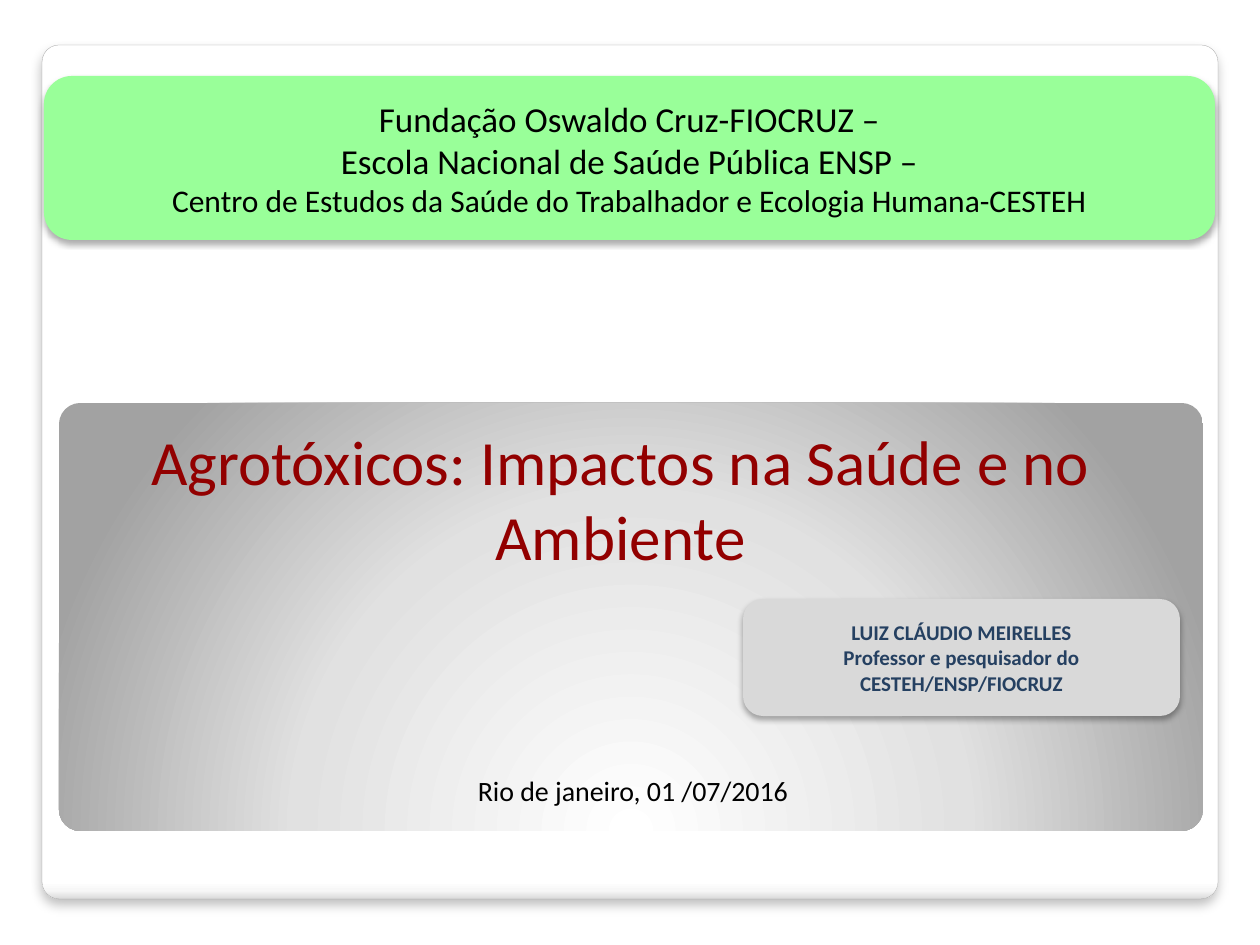
from dataclasses import dataclass
from typing import Optional

from lxml.etree import SubElement
from pptx import Presentation
from pptx.dml.color import RGBColor
from pptx.enum.shapes import MSO_SHAPE
from pptx.enum.text import MSO_ANCHOR, PP_ALIGN
from pptx.oxml.ns import qn
from pptx.util import Emu, Pt

PX = 914400 / 126


def px(n: int) -> Emu:
    return Emu(round(n * PX))


def rgb(value: str) -> RGBColor:
    return RGBColor.from_string(value)


@dataclass
class Shadow:
    alpha: int
    blur: float
    dist: float


@dataclass
class Gradient:
    """Stops in percent; linear downwards unless a focus rectangle is given."""
    stops: list[tuple[int, str]]
    focus: Optional[dict[str, int]] = None


@dataclass
class Line:
    text: str
    size: int
    color: str
    bold: bool = False


@dataclass
class Block:
    box: tuple[int, int, int, int]
    fill: Optional[str | Gradient] = None
    radius: float = 0.17
    outline: Optional[str] = None
    shadow: Optional[Shadow] = None
    lines: tuple[Line, ...] = ()


def add_gradient(sp, gradient: Gradient) -> None:
    grad = sp._element.spPr.makeelement(qn("a:gradFill"), {"rotWithShape": "1"})
    sp._element.spPr.find(qn("a:prstGeom")).addnext(grad)
    stops = SubElement(grad, qn("a:gsLst"))
    for pos, color in gradient.stops:
        gs = SubElement(stops, qn("a:gs"), pos=str(pos * 1000))
        SubElement(gs, qn("a:srgbClr"), val=color)
    if gradient.focus:
        circle = SubElement(grad, qn("a:path"), {"path": "circle"})
        SubElement(circle, qn("a:fillToRect"),
                   {side: str(v * 1000) for side, v in gradient.focus.items()})
    else:
        SubElement(grad, qn("a:lin"), ang="5400000", scaled="0")


def add_shadow(sp, shadow: Shadow) -> None:
    effects = sp._element.spPr.find(qn("a:effectLst"))
    outer = SubElement(effects, qn("a:outerShdw"), blurRad=str(Pt(shadow.blur)),
                       dist=str(Pt(shadow.dist)), dir="5400000", rotWithShape="0")
    color = SubElement(outer, qn("a:srgbClr"), val="000000")
    SubElement(color, qn("a:alpha"), val=str(shadow.alpha * 1000))


def add_lines(tf, lines: tuple[Line, ...]) -> None:
    tf.word_wrap = True
    for i, line in enumerate(lines):
        p = tf.add_paragraph() if i else tf.paragraphs[0]
        p.alignment = PP_ALIGN.CENTER
        r = p.add_run()
        r.text = line.text
        font = {"name": "Calibri", "size": Pt(line.size), "bold": line.bold}
        for name, value in font.items():
            setattr(r.font, name, value)
        r.font.color.rgb = rgb(line.color)


def add_block(s, block: Block) -> None:
    """Draw a rounded rectangle, or a plain text box when there is no fill."""
    box = [px(n) for n in block.box]
    if block.fill is None:
        add_lines(s.shapes.add_textbox(*box).text_frame, block.lines)
        return
    sp = s.shapes.add_shape(MSO_SHAPE.ROUNDED_RECTANGLE, *box)
    sp.adjustments[0] = block.radius
    sp.shadow.inherit = False
    if isinstance(block.fill, Gradient):
        add_gradient(sp, block.fill)
    else:
        sp.fill.solid()
        sp.fill.fore_color.rgb = rgb(block.fill)
    if block.outline:
        sp.line.color.rgb = rgb(block.outline)
        sp.line.width = Pt(0.16)
    else:
        sp.line.fill.background()
    if block.shadow:
        add_shadow(sp, block.shadow)
    if block.lines:
        sp.text_frame.vertical_anchor = MSO_ANCHOR.MIDDLE
        add_lines(sp.text_frame, block.lines)


FRAME_FILL = Gradient([(0, "FFFFFF"), (98, "FFFFFF"), (99, "F7F7F7"), (100, "DADADA")])
PANEL_FILL = Gradient([(0, "FFFFFF"), (55, "E1E1E1"), (100, "A2A2A2")],
                      {"l": 50, "t": 175, "r": 50, "b": -75})
CARD_SHADOW = Shadow(32, 3.5, 2.2)
BLACK, NAVY, RED = "000000", "254061", "920000"

BLOCKS = [
    # Frame and title panel
    Block((42, 45, 1176, 854), FRAME_FILL, 0.02, "A4A4A4", Shadow(25, 6, 4)),
    Block((59, 403, 1144, 428), PANEL_FILL, 0.05),
    # Author card
    Block((743, 599, 437, 117), "D9D9D9", shadow=CARD_SHADOW, lines=(
        Line("LUIZ CLÁUDIO MEIRELLES", 12, NAVY, True),
        Line("Professor e pesquisador do CESTEH/ENSP/FIOCRUZ", 12, NAVY, True))),
    # Institution header
    Block((44, 76, 1171, 164), "99FF99", shadow=CARD_SHADOW, lines=(
        Line("Fundação Oswaldo Cruz-FIOCRUZ –", 20, BLACK),
        Line("Escola Nacional de Saúde Pública ENSP –", 20, BLACK),
        Line("Centro de Estudos da Saúde do Trabalhador e Ecologia Humana-CESTEH",
             18, BLACK))),
    # Title and date
    Block((98, 416, 1045, 165), lines=(
        Line("Agrotóxicos: Impactos na Saúde e no Ambiente", 36, RED),)),
    Block((410, 767, 446, 47), lines=(Line("Rio de janeiro, 01 /07/2016", 16, BLACK),)),
]


def main() -> None:
    prs = Presentation()
    prs.slide_width, prs.slide_height = px(1260), px(945)
    s = prs.slides.add_slide(prs.slide_layouts[6])
    for block in BLOCKS:
        add_block(s, block)
    prs.save("out.pptx")


if __name__ == "__main__":
    main()
